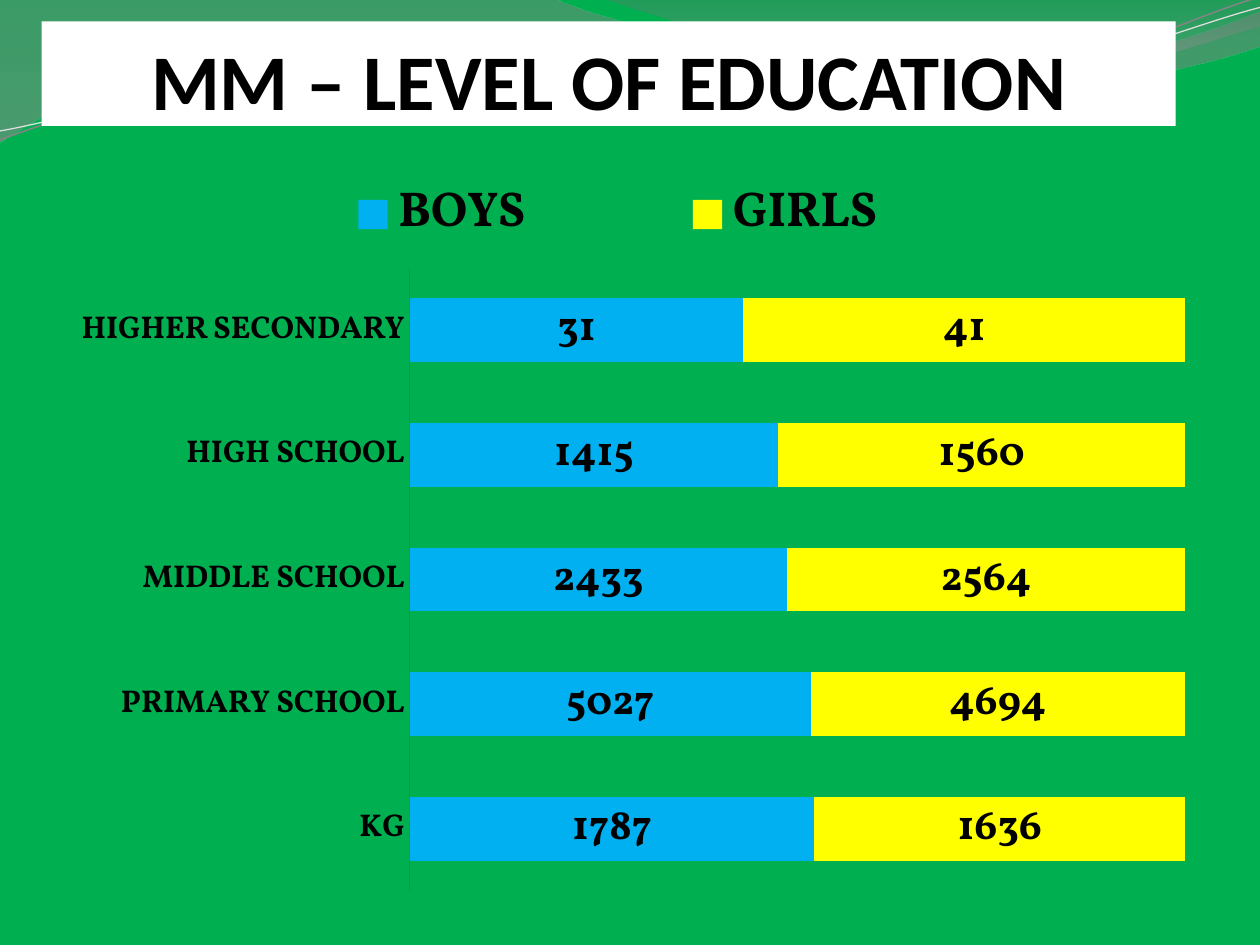
from lxml import etree
from pptx import Presentation
from pptx.chart.data import CategoryChartData
from pptx.dml.color import RGBColor
from pptx.enum.chart import XL_CHART_TYPE, XL_LEGEND_POSITION, XL_TICK_LABEL_POSITION, XL_TICK_MARK
from pptx.enum.text import MSO_ANCHOR, MSO_AUTO_SIZE, PP_ALIGN
from pptx.oxml.ns import qn
from pptx.util import Cm, Pt

STACKED = XL_CHART_TYPE.BAR_STACKED_100
TOP = XL_LEGEND_POSITION.TOP
NEXT_TO = XL_TICK_LABEL_POSITION.NEXT_TO_AXIS
NO_TICK = XL_TICK_MARK.NONE
BOTTOM = MSO_ANCHOR.BOTTOM
NO_FIT = MSO_AUTO_SIZE.NONE
CENTER = PP_ALIGN.CENTER

LEVELS = ["KG", "PRIMARY SCHOOL", "MIDDLE SCHOOL", "HIGH SCHOOL", "HIGHER SECONDARY"]
PUPILS = [
    ("BOYS", [1787, 5027, 2433, 1415, 31], "00B0F0"),
    ("GIRLS", [1636, 4694, 2564, 1560, 41], "FFFF00"),
]
WIDE_WAVE = [
    (0, 0), (11.18, -0.03),
    (12.09, 0.43, 16.87, 1.6, 19.25, 1.6), (21.67, 1.6, 24.33, 0.66, 25.4, 0.23),
    (25.43, 0.91), (24.97, 1.12, 22.1, 1.93, 18.95, 1.9),
    (15.8, 1.9, 9.7, 0.71, 6.53, 0.86), (3.28, 0.91, 1.17, 2.11, -0.03, 2.87),
]
RIGHT_WAVE = [
    (12.17, -0.03), (12.93, 0.28, 17.32, 1.57, 19.53, 1.65),
    (21.74, 1.75, 24.41, 0.81, 25.4, 0.53), (25.4, 0),
]
GRAY_STRAND = [
    (-0.05, 2.22), (1.19, 1.82, 4.02, 1.04, 7.05, 1.05),
    (10.05, 1.07, 15.02, 2.37, 18.08, 2.29), (21.13, 2.2, 23.87, 0.91, 25.41, 0.55),
]
LIGHT_STRAND = [
    (-0.04, 2.04), (1.16, 1.9, 4.18, 1.15, 7.2, 1.16),
    (10.25, 1.18, 15.13, 2.25, 18.19, 2.16), (21.21, 2.1, 23.93, 1.06, 25.45, 0.75),
]


def color(value):
    """Turn a hex string into a colour."""
    return RGBColor.from_string(value)


def set_layout(element, index, inner, **box):
    """Give a chart part a manual layout in fractions of the chart."""
    for old in element.findall(qn("c:layout")):
        element.remove(old)
    layout = etree.Element(qn("c:layout"))
    manual = etree.SubElement(layout, qn("c:manualLayout"))
    settings = {"layoutTarget": "inner"} if inner else {}
    settings.update(xMode="edge", yMode="edge", **box)
    for name, value in settings.items():
        etree.SubElement(manual, qn(f"c:{name}")).set("val", str(value))
    element.insert(index, layout)


class EducationSlide:
    """Holds the style and the current slide."""

    title_font = "Calibri"
    chart_font = "Vollkorn"
    ink = "000000"

    def __init__(self, presentation, background):
        """Add a title-only slide with a plain background."""
        self.slide = presentation.slides.add_slide(presentation.slide_layouts[5])
        fill = self.slide.background.fill
        fill.solid()
        fill.fore_color.rgb = color(background)

    def outline(self, segments, close):
        """Draw a freeform whose six-number segments are cubic curves."""
        ends = [(Cm(segment[-2]), Cm(segment[-1])) for segment in segments]
        builder = self.slide.shapes.build_freeform(*ends[0], scale=1.0)
        builder.add_line_segments(ends[1:], close=close)
        shape = builder.convert_to_shape()
        shape.shadow.inherit = False
        lines = list(shape._element.iter(qn("a:lnTo")))
        for line, segment in zip(lines, segments[1:]):
            if len(segment) == 2:
                continue
            curve = etree.Element(qn("a:cubicBezTo"))
            for x, y in zip(segment[::2], segment[1::2]):
                point = etree.SubElement(curve, qn("a:pt"))
                point.set("x", str(Cm(x) - shape.left))
                point.set("y", str(Cm(y) - shape.top))
            line.getparent().replace(line, curve)
        return shape

    def wave(self, segments, stops):
        """Add a closed wave with a translucent vertical gradient."""
        shape = self.outline(segments, True)
        shape.line.fill.background()
        shape.fill.gradient()
        shape.fill.gradient_angle = 270
        for stop, (position, shade, _) in zip(shape.fill.gradient_stops, stops):
            stop.position = position
            stop.color.rgb = color(shade)
        shades = shape._element.spPr.iter(qn("a:srgbClr"))
        for element, (_, _, opacity) in zip(shades, stops):
            etree.SubElement(element, qn("a:alpha")).set("val", str(opacity * 1000))

    def strand(self, segments, shade, width):
        """Add an open curved line, slightly tilted."""
        shape = self.outline(segments, False)
        shape.rotation = 357.3
        shape.fill.background()
        shape.line.color.rgb = color(shade)
        shape.line.width = Pt(width)

    def title(self, text, left, top, width, height):
        """Fill the title placeholder and bring it to the front."""
        shape = self.slide.shapes.title
        shape.left, shape.top, shape.width, shape.height = map(Cm, (left, top, width, height))
        shape.fill.solid()
        shape.fill.fore_color.rgb = color("FFFFFF")
        frame = shape.text_frame
        frame.text = text
        frame.auto_size = NO_FIT
        frame.vertical_anchor = BOTTOM
        frame.margin_left = frame.margin_right = frame.margin_bottom = 0
        frame.margin_top = Cm(0.13)
        paragraph = frame.paragraphs[0]
        paragraph.alignment = CENTER
        self.style(paragraph.font, 45, self.title_font)
        self.slide.shapes._spTree.append(shape._element)

    def style(self, font, size, name):
        """Apply bold dark type."""
        font.size, font.name, font.bold = Pt(size), name, True
        font.color.rgb = color(self.ink)

    def chart(self, categories, groups, left, top, width, height):
        """Add a stacked percentage bar chart with value labels."""
        data = CategoryChartData()
        data.categories = categories
        for name, values, _ in groups:
            data.add_series(name, values)
        chart = self.slide.shapes.add_chart(
            STACKED, *map(Cm, (left, top, width, height)), data).chart
        chart.has_title = False
        self.style(chart.font, 18, self.chart_font)
        plot = chart.plots[0]
        plot.gap_width, plot.overlap, plot.vary_by_categories = 95, 100, False
        for series, (_, _, shade) in zip(plot.series, groups):
            series.format.fill.solid()
            series.format.fill.fore_color.rgb = color(shade)
            labels = series.data_labels
            labels.show_value = True
            self.style(labels.font, 24, self.chart_font)
        axis = chart.category_axis
        axis.major_tick_mark = axis.minor_tick_mark = NO_TICK
        axis.tick_label_position = NEXT_TO
        axis.format.line.color.rgb = color("00A046")
        self.style(axis.tick_labels.font, 18, self.chart_font)
        chart.value_axis.visible = False
        chart.value_axis.has_major_gridlines = False
        chart.has_legend = True
        chart.legend.position = TOP
        chart.legend.include_in_layout = False
        self.style(chart.legend.font, 28, self.chart_font)
        set_layout(chart.legend._element, 1, False, x=3.33 / width, y=0.04 / height,
                   w=16.56 / width, h=1.31 / height)
        plot_area = chart._chartSpace.chart.plotArea
        set_layout(plot_area, 0, True, x=7.42 / width, y=1.79 / height,
                   w=15.63 / width, h=12.57 / height)


def main():
    """Build and save the slide."""
    presentation = Presentation()
    presentation.slide_width, presentation.slide_height = Cm(25.4), Cm(19.05)
    page = EducationSlide(presentation, "00B050")
    page.wave(WIDE_WAVE, [(0, "848484", 45), (1, "888888", 55)])
    page.wave(RIGHT_WAVE, [(0, "6F6F6F", 30), (0.8, "9D9D9D", 45)])
    page.strand(GRAY_STRAND, "848484", 0.85)
    page.strand(LIGHT_STRAND, "DDDDDD", 0.75)
    page.title("MM – LEVEL OF EDUCATION", 0.84, 0.43, 22.86, 2.11)
    page.chart(LEVELS, PUPILS, 0.84, 3.61, 23.93, 14.53)
    presentation.save("out.pptx")


if __name__ == "__main__":
    main()
